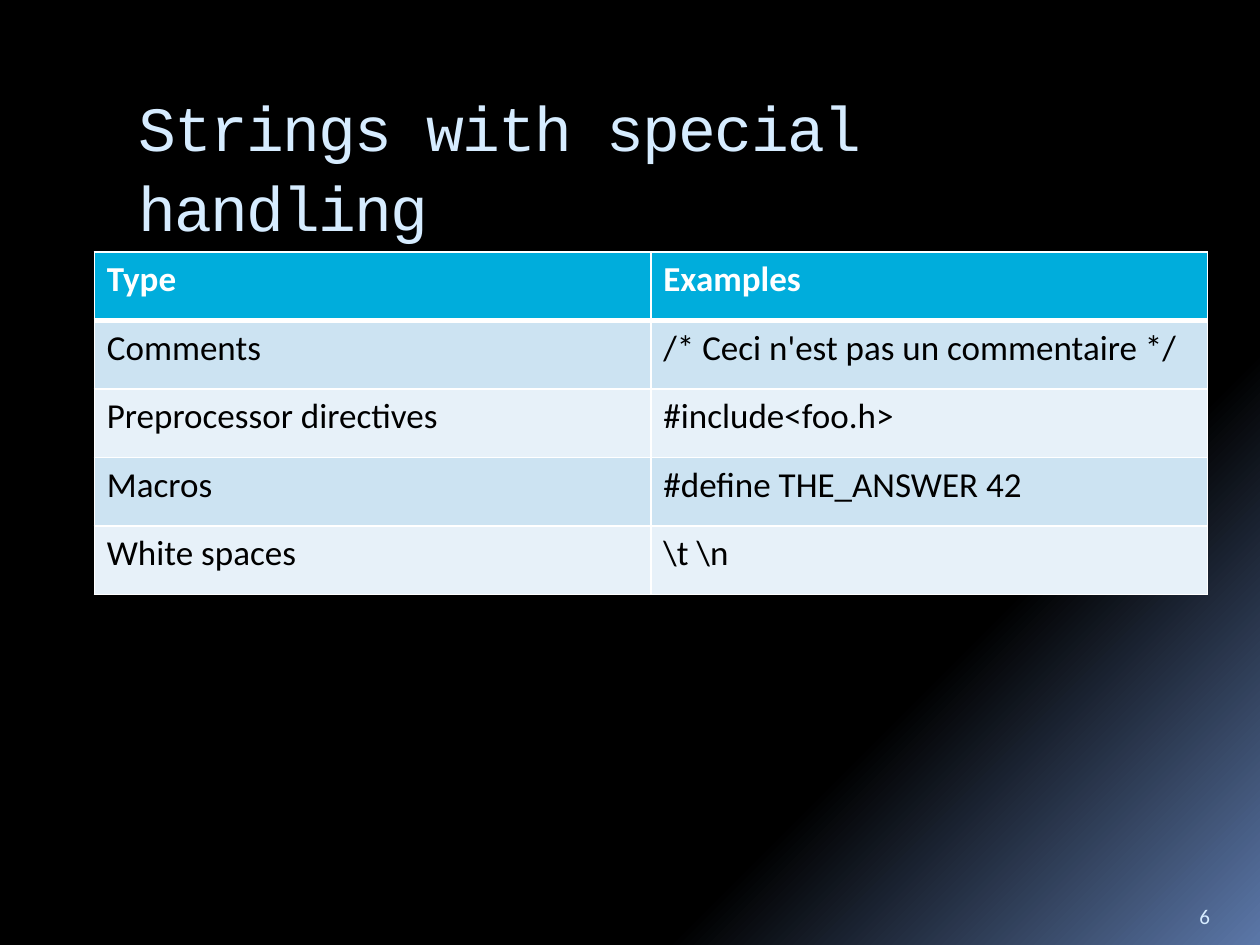
from lxml import etree
from pptx import Presentation
from pptx.dml.color import RGBColor
from pptx.enum.text import MSO_ANCHOR
from pptx.oxml.ns import qn
from pptx.util import Cm, Pt

TOP, BOTTOM = MSO_ANCHOR.TOP, MSO_ANCHOR.BOTTOM
WHITE, BLACK, PALE_BLUE = "FFFFFF", "000000", "D6ECFF"
HEADER_FILL, BAND_FILLS = "00ADDC", ("CCE3F2", "E7F1F9")
TITLE_FORMAT = {"name": "Courier New", "size": Pt(36)}
NUMBER_FORMAT = {"name": "Calibri", "size": Pt(12)}
HEADER_FORMAT = {"name": "Calibri", "size": Pt(20), "bold": True}
BODY_FORMAT = HEADER_FORMAT | {"bold": False}
STRING_TYPES = [
    ("Type", "Examples"),
    ("Comments", "/* Ceci n'est pas un commentaire */"),
    ("Preprocessor directives", "#include<foo.h>"),
    ("Macros", "#define THE_ANSWER 42"),
    ("White spaces", "\\t \\n"),
]


def rgb(code):
    """Turn a hex string into a colour."""
    return RGBColor.from_string(code)


class SlideBuilder:
    """Draws the elements of one slide in a shared style."""

    def __init__(self, slide):
        """Keep the slide to draw on."""
        self.slide = slide

    def background(self, stops, angle):
        """Fill the background with a two-stop gradient."""
        fill = self.slide.background.fill
        fill.gradient()
        fill.gradient_angle = angle
        for stop, (position, color) in zip(fill.gradient_stops, stops):
            stop.position = position
            stop.color.rgb = rgb(color)

    def styled_run(self, frame, text, color, font_format):
        """Put one formatted run into a text frame."""
        run = frame.paragraphs[0].add_run()
        run.text = text
        run.font.color.rgb = rgb(color)
        for attribute, value in font_format.items():
            setattr(run.font, attribute, value)
        return run

    def text(self, text, box, color, font_format, frame_format):
        """Add a wrapped text box and return its paragraph and run."""
        frame = self.slide.shapes.add_textbox(*map(Cm, box)).text_frame
        for attribute, value in ({"word_wrap": True} | frame_format).items():
            setattr(frame, attribute, value)
        return frame.paragraphs[0], self.styled_run(frame, text, color, font_format)

    def title(self, text, box):
        """Add the title with tightened letters."""
        paragraph, run = self.text(text, box, PALE_BLUE, TITLE_FORMAT,
                                   {"vertical_anchor": TOP, "margin_top": Cm(0.25)})
        paragraph.line_spacing = 1.07
        run._r.get_or_add_rPr().set("spc", "-100")

    def borders(self, cell, widths):
        """Draw white borders, given widths in points by side."""
        properties = cell._tc.get_or_add_tcPr()
        for side, width in widths.items():
            line = etree.SubElement(properties, qn(f"a:ln{side}"), w=str(Pt(width)))
            solid = etree.SubElement(line, qn("a:solidFill"))
            etree.SubElement(solid, qn("a:srgbClr"), val=WHITE)

    def table(self, rows, left, top, column_width, row_height):
        """Add a banded table whose first row is the header."""
        column_count = len(rows[0])
        table = self.slide.shapes.add_table(
            len(rows), column_count, Cm(left), Cm(top),
            Cm(column_width * column_count), Cm(row_height * len(rows))).table
        for index, row in enumerate(rows):
            header = index == 0
            fill = HEADER_FILL if header else BAND_FILLS[(index - 1) % 2]
            widths = {"L": 1, "R": 1, "T": 3 if index == 1 else 1, "B": 3 if header else 1}
            for column, text in enumerate(row):
                cell = table.cell(index, column)
                self.borders(cell, widths)
                cell.fill.solid()
                cell.fill.fore_color.rgb = rgb(fill)
                self.styled_run(cell.text_frame, text, WHITE if header else BLACK,
                                HEADER_FORMAT if header else BODY_FORMAT)


def main():
    """Build and save the slide."""
    presentation = Presentation()
    presentation.slide_width, presentation.slide_height = Cm(25.4), Cm(19.05)
    builder = SlideBuilder(presentation.slides.add_slide(presentation.slide_layouts[6]))
    builder.background([(0.73, BLACK), (1, "5B77A8")], 315)
    builder.title("Strings with special handling", (2.54, 1.42, 21.59, 2.54))
    builder.text("6", (23.93, 17.83, 1.27, 1.02), PALE_BLUE, NUMBER_FORMAT,
                 {"vertical_anchor": BOTTOM})
    builder.table(STRING_TYPES, 1.9, 5.08, 11.22, 1.38)
    presentation.save("out.pptx")


if __name__ == "__main__":
    main()
